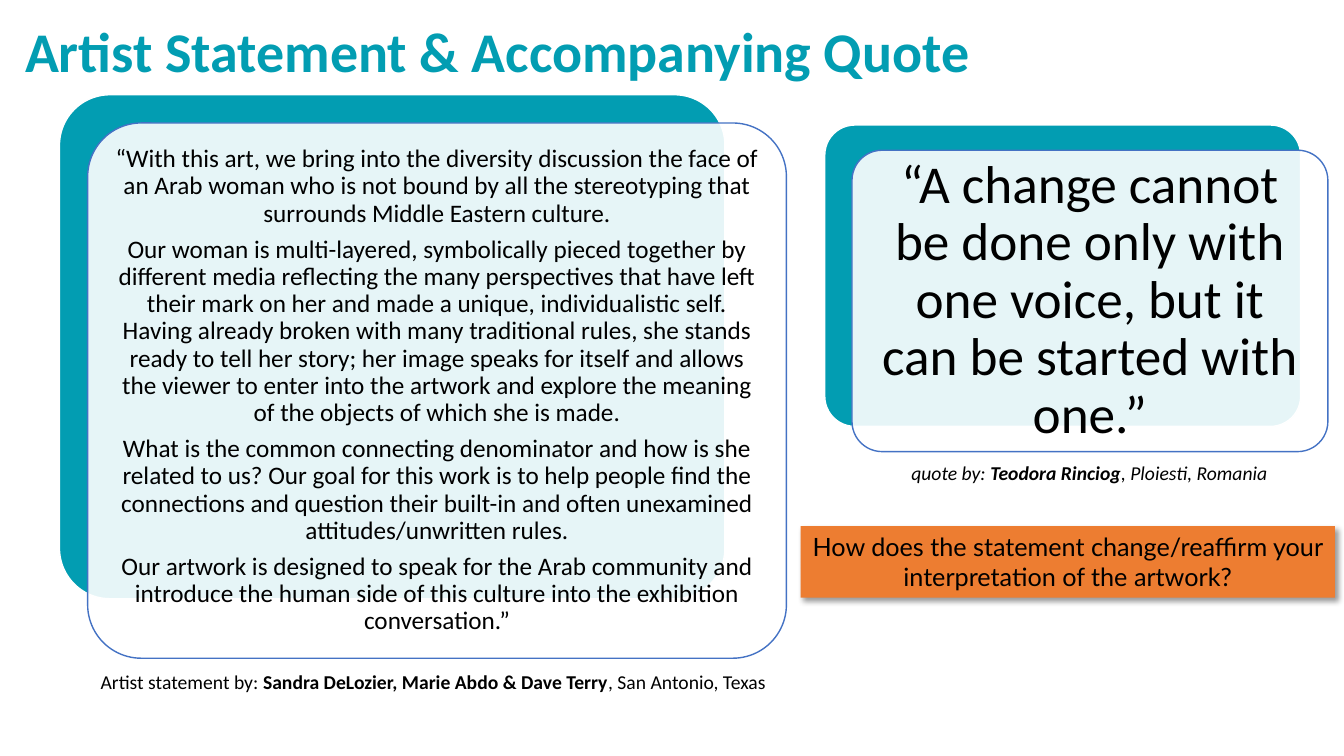
from lxml.etree import SubElement
from pptx import Presentation
from pptx.dml.color import RGBColor
from pptx.enum.shapes import MSO_SHAPE as Preset
from pptx.enum.text import MSO_ANCHOR as Anchor, PP_ALIGN as Align
from pptx.oxml.ns import qn
from pptx.util import Inches, Pt

COLORS = {
    "teal": "029DB2",
    "blue": "4472C4",
    "orange": "ED7D31",
    "white": "FFFFFF",
    "black": "000000",
}
CORNER = 0.1  # corner radius as a share of the card's shorter side
CORNER_INSET = 0.29  # share of the radius that a round rectangle keeps free of text

STATEMENT = [
    "“With this art, we bring into the diversity discussion the face of an Arab woman "
    "who is not bound by all the stereotyping that surrounds Middle Eastern culture.",
    "Our woman is multi-layered, symbolically pieced together by different media "
    "reflecting the many perspectives that have left their mark on her and made a unique, "
    "individualistic self. Having already broken with many traditional rules, she stands "
    "ready to tell her story; her image speaks for itself and allows the viewer to enter "
    "into the artwork and explore the meaning of the objects of which she is made.",
    "What is the common connecting denominator and how is she related to us? Our goal for "
    "this work is to help people find the connections and question their built-in and often "
    "unexamined attitudes/unwritten rules.",
    "Our artwork is designed to speak for the Arab community and introduce the human side "
    "of this culture into the exhibition conversation.”",
]
QUOTE = ["“A change cannot be done only with one voice, but it can be started with one.”"]


def rgb(name):
    return RGBColor.from_string(COLORS[name])


def write(para, text, size=18, font="Calibri", color="black", bold=False, italic=False):
    """Add one formatted run to a paragraph."""
    span = para.add_run()
    span.text = text
    span.font.size = Pt(size)
    span.font.name = font
    span.font.color.rgb = rgb(color)
    span.font.bold = bold
    span.font.italic = italic


class StatementSlide:
    def __init__(self, deck):
        self.page = deck.slides.add_slide(deck.slide_layouts[6])

    def shape(self, preset, at, fill, line=None):
        shape = self.page.shapes.add_shape(preset, *map(Inches, at))
        shape.shadow.inherit = False
        shape.fill.solid()
        shape.fill.fore_color.rgb = rgb(fill)
        if line:
            shape.line.color.rgb = rgb(line)
            shape.line.width = Pt(1)
        else:
            shape.line.fill.background()
        return shape

    def text_box(self, at, anchor=Anchor.TOP):
        box = self.page.shapes.add_textbox(*map(Inches, at))
        box.text_frame.word_wrap = True
        box.text_frame.vertical_anchor = anchor
        return box.text_frame.paragraphs[0]

    def title(self, at, text):
        para = self.text_box(at, Anchor.BOTTOM)
        para.line_spacing = 0.9
        write(para, text, size=40, color="teal", bold=True)

    def card(self, back, front, texts, size, margin):
        """Teal card behind a nearly opaque white one that carries the text."""
        self.shape(Preset.ROUNDED_RECTANGLE, back, "teal", "white").adjustments[0] = CORNER
        card = self.shape(Preset.ROUNDED_RECTANGLE, front, "white", "blue")
        card.adjustments[0] = CORNER
        fill_color = card.fill._xPr.find(qn("a:solidFill"))[0]
        SubElement(fill_color, qn("a:alpha"), val="90000")

        frame = card.text_frame
        frame.word_wrap = True
        frame.vertical_anchor = Anchor.MIDDLE
        inset = Inches(margin - CORNER_INSET * CORNER * min(front[2:]))
        frame.margin_left = frame.margin_right = inset
        frame.margin_top = frame.margin_bottom = inset
        for index, text in enumerate(texts):
            para = frame.add_paragraph() if index else frame.paragraphs[0]
            para.alignment = Align.CENTER
            para.line_spacing = 0.9
            para.space_after = Pt(0.35 * size)
            write(para, text, size=size)

    def credit(self, at, lead, name, place, italic=False):
        para = self.text_box(at)
        for text, bold in ((lead, False), (name, True), (place, False)):
            write(para, text, size=14, bold=bold, italic=italic)

    def question(self, at, text):
        banner = self.shape(Preset.RECTANGLE, at, "orange")
        effects = banner._element.spPr.find(qn("a:effectLst"))
        shadow = SubElement(effects, qn("a:outerShdw"), blurRad=str(Pt(4)),
                            dist=str(Pt(3)), dir="2700000", algn="tl", rotWithShape="0")
        shade = SubElement(shadow, qn("a:srgbClr"), val=COLORS["black"])
        SubElement(shade, qn("a:alpha"), val="40000")
        banner.text_frame.word_wrap = True
        banner.text_frame.vertical_anchor = Anchor.TOP
        para = banner.text_frame.paragraphs[0]
        para.alignment = Align.CENTER
        write(para, text, font="Lato")


def main():
    deck = Presentation()
    deck.slide_width, deck.slide_height = Inches(13.33), Inches(7.5)
    slide = StatementSlide(deck)

    # Title
    slide.title((0.15, -0.56, 10.14, 1.45), "Artist Statement & Accompanying Quote")

    # Statement and quote cards
    slide.card((0.59, 0.94, 6.6, 5), (0.87, 1.22, 6.93, 5.31), STATEMENT, 18, 0.22)
    slide.card((8.18, 1.24, 4.72, 2.99), (8.45, 1.49, 4.72, 2.99), QUOTE, 38, 0.25)

    # Question to the viewer
    slide.question((7.94, 5.22, 5.3, 0.71),
                   "How does the statement change/reaffirm your interpretation of the artwork?")

    # Credits
    slide.credit((8.94, 4.52, 3.8, 0.34), "quote by: ", "Teodora Rinciog",
                 ", Ploiesti, Romania", italic=True)
    slide.credit((0.9, 6.6, 7.23, 0.34), "Artist statement by: ",
                 "Sandra DeLozier, Marie Abdo & Dave Terry", ", San Antonio, Texas")

    deck.save("out.pptx")


if __name__ == "__main__":
    main()
